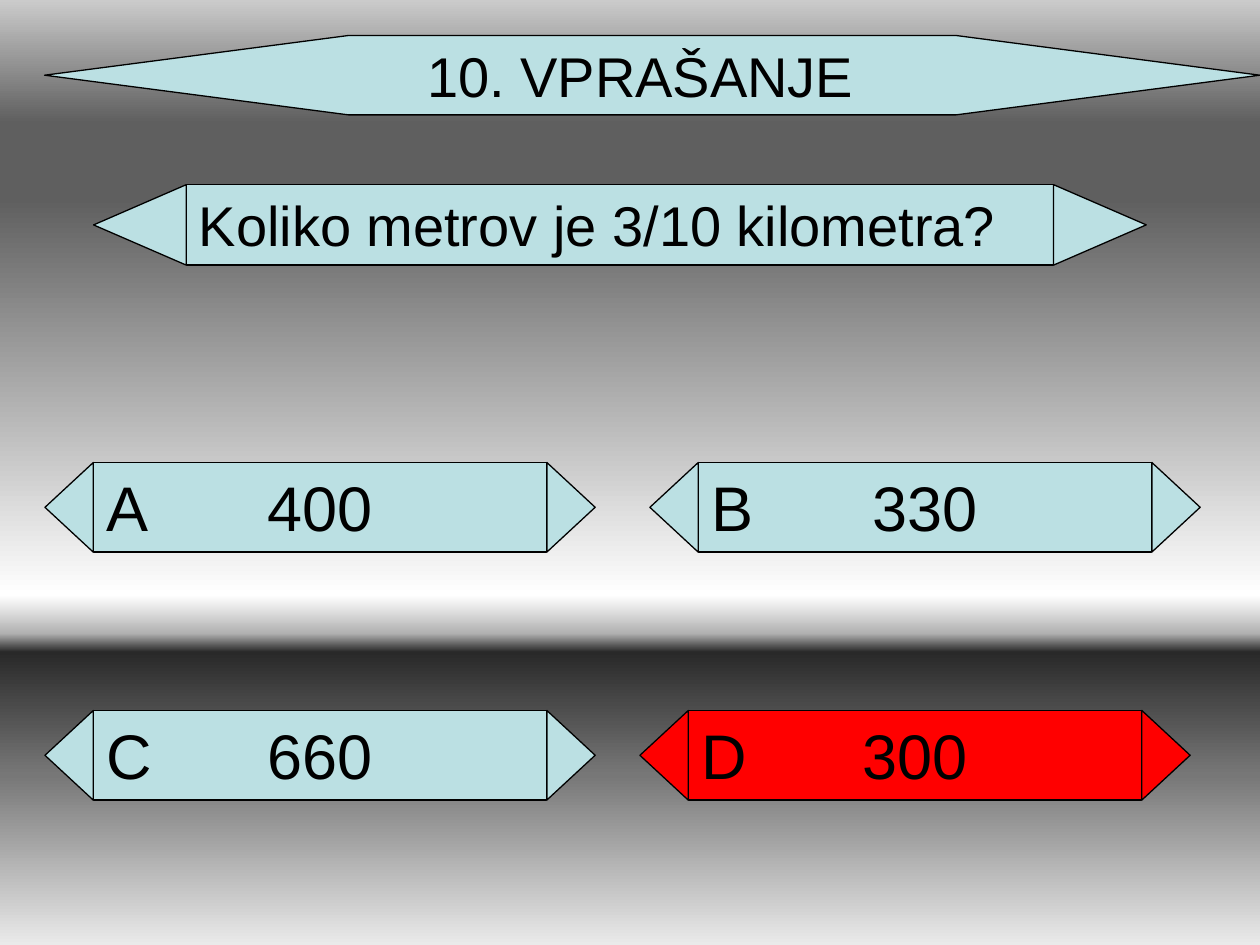
import pptx
import pptx.util
import pptx.dml.color
import pptx.enum.shapes
import pptx.enum.text
import pptx.oxml.ns
import lxml.etree

Pt = pptx.util.Pt
RGBColor = pptx.dml.color.RGBColor
MSO_SHAPE = pptx.enum.shapes.MSO_SHAPE
PP_ALIGN = pptx.enum.text.PP_ALIGN
qn = pptx.oxml.ns.qn

COLORS = {"panel": "BBE0E3", "correct": "FF0000", "ink": "000000"}
BACKGROUND_STOPS = [
    (0, "CBCBCB"), (13, "5F5F5F"), (21, "5F5F5F"), (63, "FFFFFF"),
    (67, "B2B2B2"), (69, "292929"), (82, "777777"), (100, "EAEAEA"),
]


def add_panel(shapes, kind, left, top, width, height, color):
    panel = shapes.add_shape(kind, Pt(left), Pt(top), Pt(width), Pt(height))
    panel.shadow.inherit = False
    panel.fill.solid()
    panel.fill.fore_color.rgb = RGBColor.from_string(COLORS[color])
    panel.line.color.rgb = RGBColor.from_string(COLORS["ink"])
    panel.line.width = Pt(0.75)
    return panel


def write(holder, text, size, alignment):
    frame = holder.text_frame
    frame.text = text
    frame.word_wrap = True
    frame.auto_size = pptx.enum.text.MSO_AUTO_SIZE.SHAPE_TO_FIT_TEXT
    frame.vertical_anchor = pptx.enum.text.MSO_ANCHOR.TOP
    paragraph = frame.paragraphs[0]
    properties = paragraph._p.get_or_add_pPr()
    before = lxml.etree.SubElement(properties, qn("a:spcBef"))
    lxml.etree.SubElement(before, qn("a:spcPct"), val="50000")
    paragraph.alignment = alignment
    paragraph.font.name = "Arial"
    paragraph.font.size = Pt(size)
    paragraph.font.color.rgb = RGBColor.from_string(COLORS["ink"])


deck = pptx.Presentation()
deck.slide_width, deck.slide_height = Pt(720), Pt(540)
slide = deck.slides.add_slide(deck.slide_layouts[5])

backdrop = slide.background.fill
backdrop.gradient()
backdrop.gradient_angle = 270
stops = slide.element.find(".//" + qn("a:gsLst"))
stops.clear()
for position, shade in BACKGROUND_STOPS:
    stop = lxml.etree.SubElement(stops, qn("a:gs"), pos=str(position * 1000))
    lxml.etree.SubElement(stop, qn("a:srgbClr"), val=shade)

banner = add_panel(slide.shapes, MSO_SHAPE.HEXAGON, 25.5, 20.3, 694.5, 45.4, "panel")
banner.adjustments[0] = 3.826

heading = slide.shapes.title
heading.left, heading.top, heading.width, heading.height = Pt(196), Pt(20.3), Pt(340), Pt(45.4)
write(heading, "10. VPRAŠANJE", 32, PP_ALIGN.CENTER)
slide.shapes._spTree.append(heading._element)

LEFT, CENTER = PP_ALIGN.LEFT, PP_ALIGN.CENTER
boxes = [
    ("", "Koliko metrov je 3/10 kilometra?", 106.5, 105.5, 495.5, 46, 53, 32, LEFT, "panel"),
    ("A", "400", 53.3, 264.3, 259.2, 51.2, 27.6, 36, CENTER, "panel"),
    ("C", "660", 53.3, 406, 259.2, 51.2, 27.6, 36, CENTER, "panel"),
    ("B", "330", 399, 264.3, 259.2, 51.2, 27.6, 36, CENTER, "panel"),
    ("D", "300", 393.3, 406, 259.2, 51.2, 27.6, 36, CENTER, "correct"),
]
for letter, text, left, top, width, height, tip, size, alignment, color in boxes:
    group = slide.shapes.add_group_shape().shapes
    box = add_panel(group, MSO_SHAPE.RECTANGLE, left, top, width, height, color)
    write(box, text, size, alignment)
    for middle, rotation in ((left + width + tip / 2, 90), (left - tip / 2, 270)):
        point = add_panel(group, MSO_SHAPE.ISOSCELES_TRIANGLE, middle - height / 2,
                          top + (height - tip) / 2, height, tip, color)
        point.rotation = rotation
    if letter:
        label = group.add_textbox(Pt(left + 0.5), Pt(top), Pt(34), Pt(50.4))
        write(label, letter, size, LEFT)

deck.save("out.pptx")
